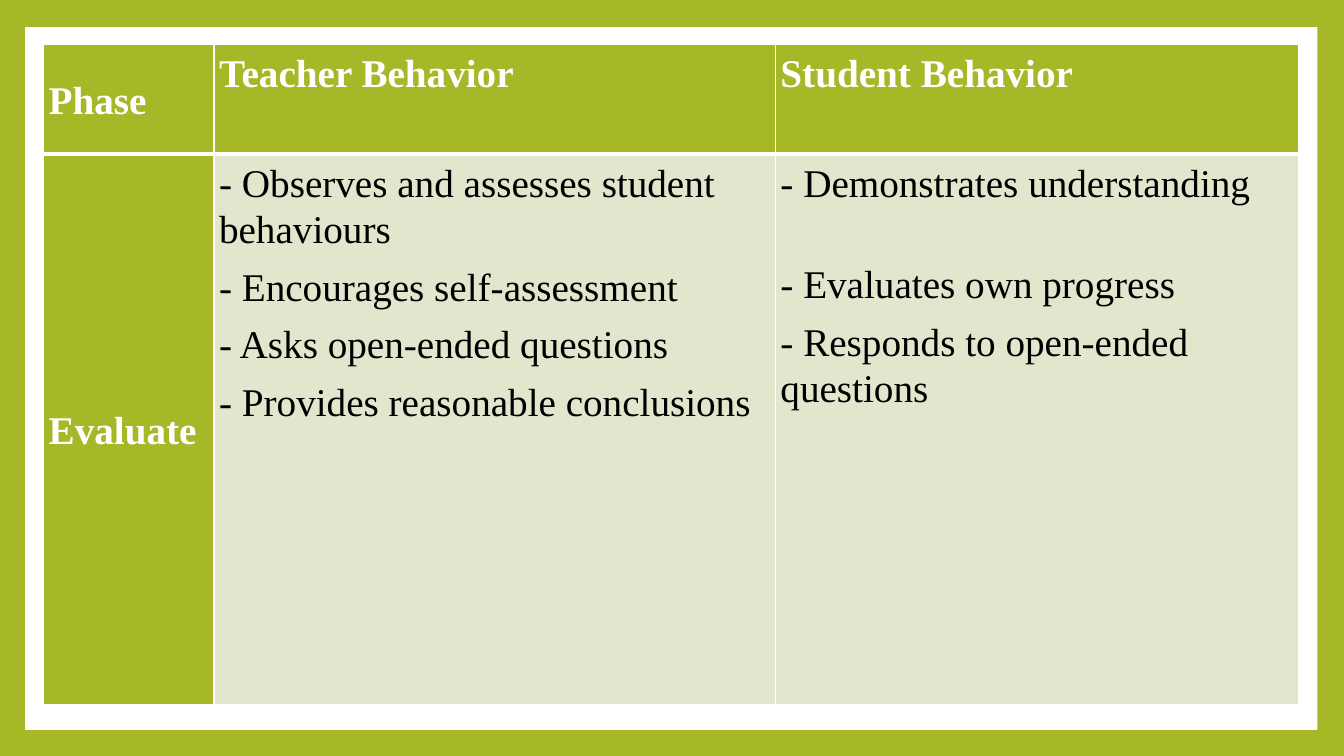
import pptx
import pptx.util
import pptx.dml.color
import pptx.enum.shapes
import pptx.enum.text
import lxml.etree

Pt = pptx.util.Pt
RGB = pptx.dml.color.RGBColor
GREEN = RGB(0xA6, 0xB7, 0x27)
PALE = RGB(0xE1, 0xE6, 0xCD)
WHITE = RGB(0xFF, 0xFF, 0xFF)
BLACK = RGB(0, 0, 0)
MID = pptx.enum.text.MSO_ANCHOR.MIDDLE
TOP = pptx.enum.text.MSO_ANCHOR.TOP
NS = "http://schemas.openxmlformats.org/drawingml/2006/main"


def edge(cell, side, width, spot):
    line = lxml.etree.Element(f"{{{NS}}}ln{side}", w=str(Pt(width)))
    paint = lxml.etree.SubElement(line, f"{{{NS}}}solidFill")
    lxml.etree.SubElement(paint, f"{{{NS}}}srgbClr", val=str(WHITE))
    cell._tc.get_or_add_tcPr().insert(spot, line)


deck = pptx.Presentation()
deck.slide_width = Pt(960)
deck.slide_height = Pt(540)
slide = deck.slides.add_slide(deck.slide_layouts[6])
slide.background.fill.solid()
slide.background.fill.fore_color.rgb = GREEN

panel = slide.shapes.add_shape(
    pptx.enum.shapes.MSO_SHAPE.RECTANGLE, Pt(18), Pt(19.4), Pt(923), Pt(502))
panel.shadow.inherit = False
panel.fill.solid()
panel.fill.fore_color.rgb = WHITE
panel.line.fill.background()

rows = [
    [["Phase"], ["Teacher Behavior"], ["Student Behavior"]],
    [
        ["Evaluate"],
        ["- Observes and assesses student behaviours",
         "- Encourages self-assessment",
         "- Asks open-ended questions",
         "- Provides reasonable conclusions"],
        ["- Demonstrates understanding",
         "- Evaluates own progress",
         "- Responds to open-ended questions"],
    ],
]
table = slide.shapes.add_table(
    2, 3, Pt(31.2), Pt(31.7), Pt(896.4), Pt(471.6)).table
for col, width in zip(table.columns, [121.7, 401, 373.7]):
    col.width = Pt(width)
for row, height in zip(table.rows, [78.5, 393.1]):
    row.height = Pt(height)

for r, row in enumerate(rows):
    for c, lines in enumerate(row):
        cell = table.cell(r, c)
        head = r == 0 or c == 0
        cell.margin_left = cell.margin_right = Pt(3.6)
        cell.margin_top = cell.margin_bottom = Pt(3.6)
        cell.vertical_anchor = MID if c == 0 else TOP
        cell.fill.solid()
        cell.fill.fore_color.rgb = GREEN if head else PALE
        widths = [1, 1, 1, 3] if r == 0 else [1, 1, 3, 1]
        for spot, (side, width) in enumerate(zip("LRTB", widths)):
            edge(cell, side, width, spot)
        for i, text in enumerate(lines):
            frame = cell.text_frame
            para = frame.paragraphs[0] if i == 0 else frame.add_paragraph()
            para.line_spacing = 1.07
            para.space_after = Pt(8)
            run = para.add_run()
            run.text = text
            run.font.name = "Times New Roman"
            run.font.size = Pt(28)
            run.font.bold = head
            run.font.color.rgb = WHITE if head else BLACK

table.cell(1, 2).text_frame.paragraphs[0].space_after = Pt(39.5)

deck.save("out.pptx")
